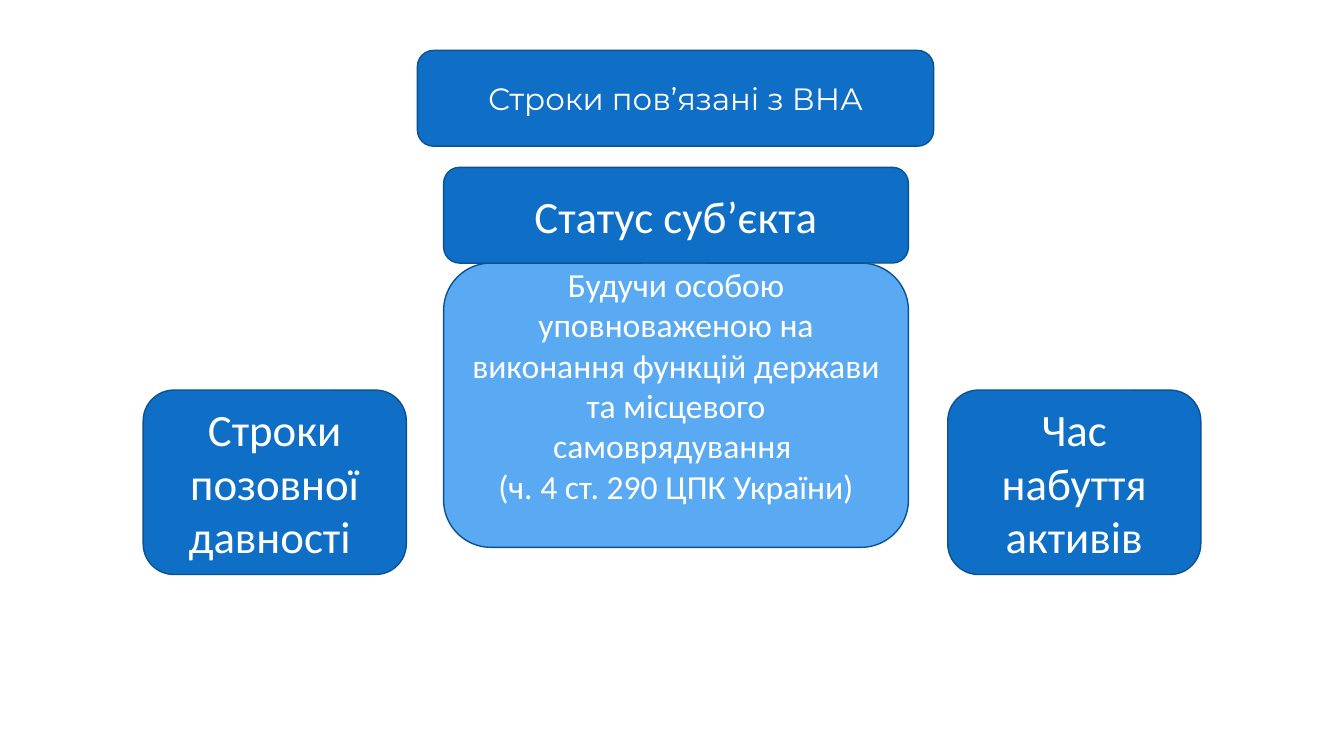
from pptx import Presentation
from pptx.dml.color import RGBColor
from pptx.enum.shapes import MSO_SHAPE as Shape
from pptx.enum.text import MSO_ANCHOR as Anchor, PP_ALIGN as Align
from pptx.util import Inches, Pt


def color(value):
    return RGBColor.from_string(value)


class SlideBuilder:
    DARK = "0F6FC6"
    LIGHT = "59AAF2"
    BORDER = "0B5292"
    TEXT = "FFFFFF"

    def __init__(self, slide):
        self.slide = slide

    def box(self, left, top, width, height, text, size=32,
            font="Calibri", fill=DARK, bottom_margin=0.05):
        shape = self.slide.shapes.add_shape(
            Shape.ROUNDED_RECTANGLE,
            Inches(left), Inches(top), Inches(width), Inches(height))
        shape.shadow.inherit = False
        shape.fill.solid()
        shape.fill.fore_color.rgb = color(fill)
        shape.line.color.rgb = color(self.BORDER)
        shape.line.width = Pt(1)

        text_frame = shape.text_frame
        text_frame.word_wrap = True
        text_frame.vertical_anchor = Anchor.MIDDLE
        text_frame.margin_bottom = Inches(bottom_margin)
        text_frame.text = text
        for paragraph in text_frame.paragraphs:
            paragraph.alignment = Align.CENTER
            for run in paragraph.runs:
                run.font.name = font
                run.font.size = Pt(size)
                run.font.color.rgb = color(self.TEXT)


def main():
    presentation = Presentation()
    presentation.slide_width = Inches(13.33)
    presentation.slide_height = Inches(7.5)
    slide = presentation.slides.add_slide(presentation.slide_layouts[6])
    builder = SlideBuilder(slide)

    # Central column: explanation, title and subject status
    builder.box(4.4, 2.61, 4.61, 2.82,
                "Будучи особою уповноваженою на виконання функцій держави "
                "та місцевого самоврядування \n(ч. 4 ст. 290 ЦПК України)",
                size=24, fill=builder.LIGHT, bottom_margin=0.45)
    builder.box(4.14, 0.5, 5.12, 0.95, "Строки пов’язані з ВНА",
                size=22, font="Montserrat")
    builder.box(4.4, 1.66, 4.61, 0.95, "Статус суб’єкта")

    # Side boxes
    side_top, side_height = 3.87, 1.83
    builder.box(1.42, side_top, 2.61, side_height, "Строки позовної давності ")
    builder.box(9.4, side_top, 2.51, side_height, "Час набуття активів")

    presentation.save("out.pptx")


if __name__ == "__main__":
    main()
